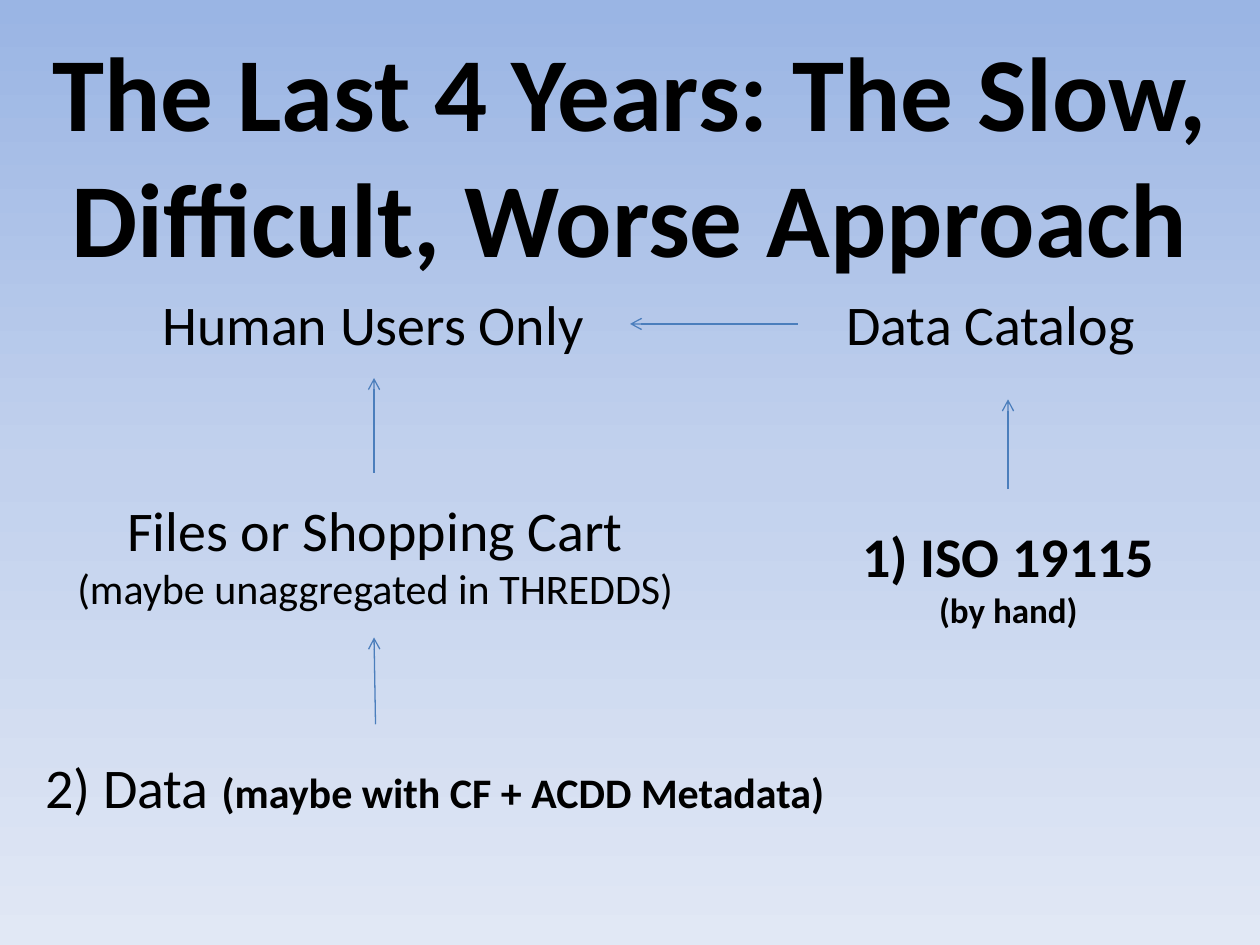
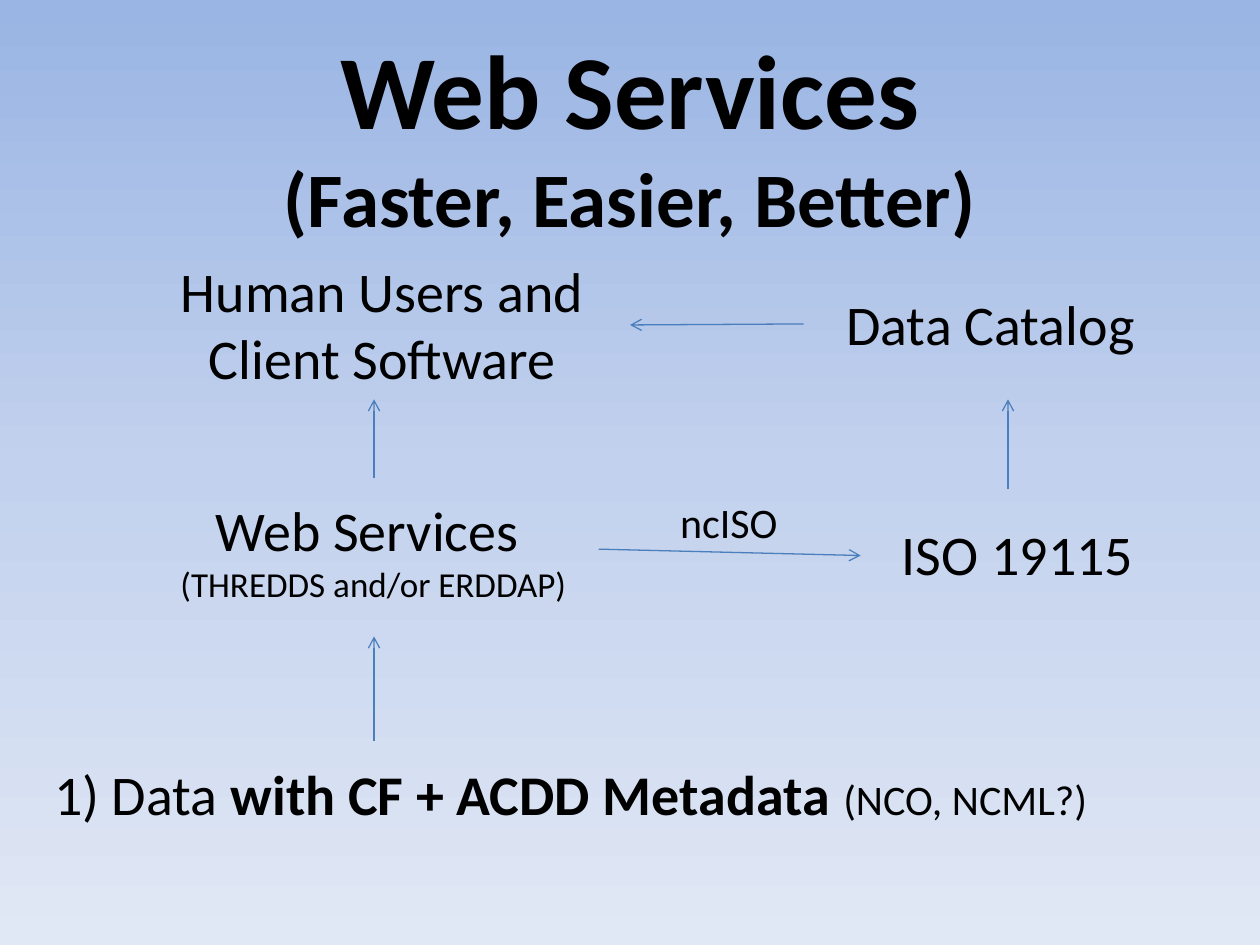
from copy import deepcopy
from dataclasses import dataclass

from lxml import etree
from pptx import Presentation
from pptx.dml.color import RGBColor
from pptx.enum.shapes import MSO_CONNECTOR
from pptx.enum.text import MSO_ANCHOR as Anchor
from pptx.enum.text import MSO_AUTO_SIZE as AutoSize
from pptx.enum.text import PP_ALIGN as Align
from pptx.oxml.ns import qn
from pptx.util import Cm, Pt

BLACK = RGBColor(0x00, 0x00, 0x00)
ARROW_BLUE = RGBColor(0x4B, 0x7E, 0xBC)
SKY = (
    RGBColor(0x9A, 0xB5, 0xE4),
    RGBColor(0xC2, 0xD1, 0xED),
    RGBColor(0xE1, 0xE8, 0xF5),
)
FONT = "Calibri"
TITLE_PT, NODE_PT = 60, 32
SLIDE_W, SLIDE_H, TITLE_H = 25.4, 19.05, 5.28
DATA_AXIS, CATALOG_AXIS = 7.54, 20.32


@dataclass(frozen=True)
class Words:
    """A stretch of text in one format."""
    text: str
    size: float = NODE_PT
    bold: bool = False


@dataclass(frozen=True)
class Node:
    """A text label of the diagram, measured in centimetres."""
    left: float
    top: float
    width: float
    height: float
    words: tuple[Words, ...]
    align: Align = Align.LEFT


@dataclass(frozen=True)
class Arrow:
    """An arrow between two points, measured in centimetres."""
    x1: float
    y1: float
    x2: float
    y2: float


@dataclass(frozen=True)
class Diagram:
    """The content of one slide."""
    title_top: float
    title: tuple[Words, ...]
    nodes: tuple[Node, ...]
    arrows: tuple[Arrow, ...]


CATALOG = Node(16.81, 5.72, 7.04, 1.62, (Words("Data Catalog"),))
TO_CATALOG = Arrow(CATALOG_AXIS, 9.86, CATALOG_AXIS, 8.05)

DIAGRAMS = (
    Diagram(
        0.43,
        (Words("The Last 4 Years: The Slow, Difficult, Worse Approach", TITLE_PT, True),),
        (
            Node(0.66, 15.04, 16.38, 1.62,
                 (Words("2) Data "), Words("(maybe with CF + ACDD Metadata)", 24, True))),
            Node(1.24, 9.86, 12.65, 2.64,
                 (Words("Files or Shopping Cart\n"),
                  Words("(maybe unaggregated in THREDDS)", 24)), Align.CENTER),
            Node(3.02, 5.72, 9.09, 1.62, (Words("Human Users Only"),)),
            Node(17.09, 10.39, 6.48, 2.49,
                 (Words("1) ISO 19115\n", bold=True), Words("(by hand)", 20, True)),
                 Align.CENTER),
            CATALOG,
        ),
        (
            Arrow(7.57, 14.6, DATA_AXIS, 12.85),
            Arrow(DATA_AXIS, 9.53, DATA_AXIS, 7.62),
            TO_CATALOG,
            Arrow(16.08, 6.53, 12.7, 6.53),
        ),
    ),
    Diagram(
        0.05,
        (Words("Web Services\n", TITLE_PT, True), Words("(Faster, Easier, Better)", 44, True)),
        (
            Node(0.84, 15.19, 21.77, 1.62,
                 (Words("1) Data "), Words("with CF + ACDD Metadata ", bold=True),
                  Words("(NCO, NCML?)", 24))),
            Node(3.35, 9.86, 8.36, 2.49,
                 (Words("Web Services \n"), Words("(THREDDS and/or ERDDAP)", 20)),
                 Align.CENTER),
            Node(3.35, 5.05, 8.71, 3.0,
                 (Words("Human Users and\nClient Software"),), Align.CENTER),
            Node(17.93, 10.34, 5.23, 1.62, (Words("ISO 19115"),)),
            CATALOG,
            Node(13.46, 9.88, 2.49, 1.27, (Words("ncISO", 24),)),
        ),
        (
            Arrow(DATA_AXIS, 14.94, DATA_AXIS, 12.83),
            Arrow(DATA_AXIS, 9.63, DATA_AXIS, 8.05),
            Arrow(12.07, 11.07, 17.35, 11.2),
            TO_CATALOG,
            Arrow(16.2, 6.53, 12.7, 6.55),
        ),
    ),
)


def add_text(p, text: str, *, size: float, bold: bool) -> None:
    """Append formatted text to a paragraph, with a break at each newline."""
    for i, line in enumerate(text.split("\n")):
        if i:
            p.add_line_break()
        if line:
            r = p.add_run()
            r.text = line
            r.font.name = FONT
            r.font.size = Pt(size)
            r.font.bold = bold
            r.font.color.rgb = BLACK


def fill_frame(tf, words: tuple[Words, ...], align: Align) -> None:
    """Write the words into the first paragraph of a text frame."""
    p = tf.paragraphs[0]
    p.alignment = align
    for part in words:
        add_text(p, part.text, size=part.size, bold=part.bold)


def add_title(s, top: float, words: tuple[Words, ...]) -> None:
    """Place and fill the title placeholder."""
    sp = s.shapes.title
    sp.left, sp.top, sp.width, sp.height = Cm(0), Cm(top), Cm(SLIDE_W), Cm(TITLE_H)
    tf = sp.text_frame
    tf.auto_size = AutoSize.NONE
    tf.vertical_anchor = Anchor.MIDDLE
    fill_frame(tf, words, Align.CENTER)


def add_node(s, node: Node) -> None:
    """Draw a text label."""
    sp = s.shapes.add_textbox(Cm(node.left), Cm(node.top), Cm(node.width), Cm(node.height))
    tf = sp.text_frame
    tf.word_wrap = False
    tf.auto_size = AutoSize.SHAPE_TO_FIT_TEXT
    fill_frame(tf, node.words, node.align)


def add_arrow(s, arrow: Arrow) -> None:
    """Draw a thin line with an open arrowhead at its end."""
    line = s.shapes.add_connector(
        MSO_CONNECTOR.STRAIGHT, Cm(arrow.x1), Cm(arrow.y1), Cm(arrow.x2), Cm(arrow.y2))
    line.line.color.rgb = ARROW_BLUE
    line.line.width = Pt(0.75)
    props = line.element.find(qn("p:spPr"))
    etree.SubElement(props.find(qn("a:ln")), qn("a:tailEnd"), type="arrow")
    etree.SubElement(props, qn("a:effectLst"))


def paint_background(master) -> None:
    """Give the master a vertical gradient with evenly spaced stops."""
    fill = master.background.fill
    fill.gradient()
    fill.gradient_angle = 270
    stops = next(master.element.iter(qn("a:gsLst")))
    stops.append(deepcopy(stops[-1]))
    for i, (stop, color) in enumerate(zip(fill.gradient_stops, SKY)):
        stop.position = i / (len(SKY) - 1)
        stop.color.rgb = color


def main() -> None:
    """Build and save the presentation."""
    prs = Presentation()
    prs.slide_width, prs.slide_height = Cm(SLIDE_W), Cm(SLIDE_H)
    paint_background(prs.slide_master)
    title_only = prs.slide_layouts.get_by_name("Title Only")
    for diagram in DIAGRAMS:
        s = prs.slides.add_slide(title_only)
        add_title(s, diagram.title_top, diagram.title)
        for node in diagram.nodes:
            add_node(s, node)
        for arrow in diagram.arrows:
            add_arrow(s, arrow)
    prs.save("out.pptx")


if __name__ == "__main__":
    main()
